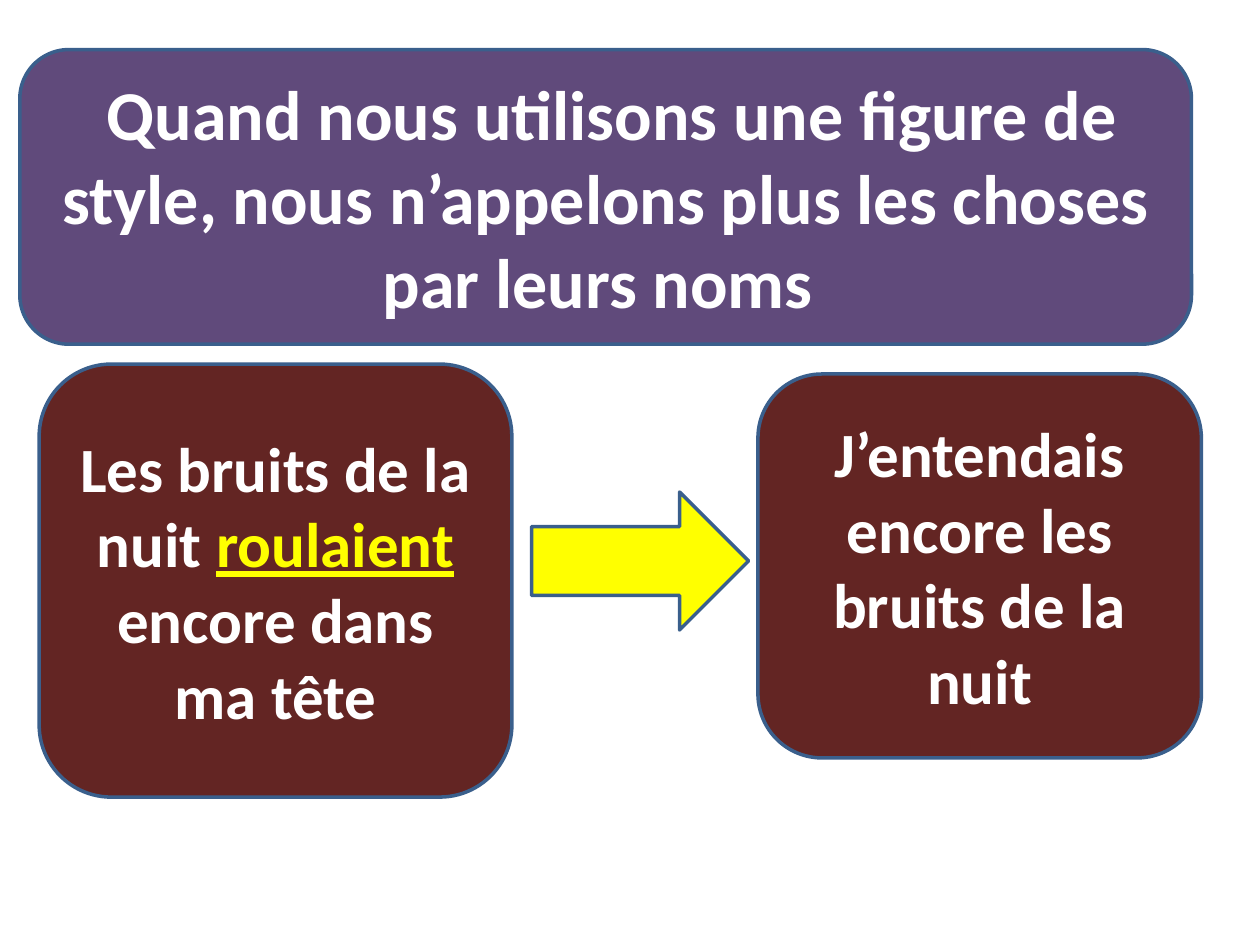
"""Build a slide contrasting a figure of speech with its plain wording."""
from dataclasses import dataclass

from pptx import Presentation
from pptx import util as u
from pptx.dml.color import RGBColor
from pptx.enum import shapes, text


@dataclass(frozen=True)
class Theme:
    font: str = "Calibri"
    purple: str = "604A7B"
    maroon: str = "632523"
    yellow: str = "FFFF00"
    white: str = "FFFFFF"
    outline: str = "3A5F8C"
    outline_width: int = 2
    lead_size: int = 32
    banner_size: int = 40
    example_size: int = 36


THEME = Theme()
ROUNDED = shapes.MSO_SHAPE.ROUNDED_RECTANGLE
ARROW = shapes.MSO_SHAPE.RIGHT_ARROW


def styled(wording, size=THEME.example_size, color=THEME.white, bold=True, underline=False):
    return dict(wording=wording, size=size, color=color, bold=bold, underline=underline)


BLOCKS = [
    dict(kind=ROUNDED, box=(0.4, 1, 23.62, 5.94), fill=THEME.purple, runs=[
        styled(" ", THEME.lead_size, bold=False),
        styled("Quand nous utilisons une figure de style, nous n’appelons plus "
               "les choses par leurs noms ", THEME.banner_size),
    ]),
    dict(kind=ROUNDED, box=(0.79, 7.34, 9.53, 8.73), fill=THEME.maroon, runs=[
        styled("Les bruits de la nuit "),
        styled("roulaient ", color=THEME.yellow, underline=True),
        styled("encore dans ma tête"),
    ]),
    dict(kind=ROUNDED, box=(15.28, 7.54, 8.94, 7.74), fill=THEME.maroon, runs=[
        styled("J’entendais encore les bruits de la nuit"),
    ]),
    dict(kind=ARROW, box=(10.72, 9.92, 4.37, 2.78), fill=THEME.yellow, runs=[]),
]


def add_run(paragraph, style):
    run = paragraph.add_run()
    run.text = style["wording"]
    font = run.font
    font.name = THEME.font
    font.size = u.Pt(style["size"])
    font.bold = style["bold"]
    font.underline = style["underline"]
    font.color.rgb = RGBColor.from_string(style["color"])


def add_block(slide, block):
    shape = slide.shapes.add_shape(block["kind"], *map(u.Cm, block["box"]))
    shape.shadow.inherit = False
    shape.fill.solid()
    shape.fill.fore_color.rgb = RGBColor.from_string(block["fill"])
    shape.line.color.rgb = RGBColor.from_string(THEME.outline)
    shape.line.width = u.Pt(THEME.outline_width)
    frame = shape.text_frame
    frame.word_wrap = True
    frame.vertical_anchor = text.MSO_ANCHOR.MIDDLE
    paragraph = frame.paragraphs[0]
    paragraph.alignment = text.PP_ALIGN.CENTER
    for style in block["runs"]:
        add_run(paragraph, style)


def main():
    presentation = Presentation()
    presentation.slide_width, presentation.slide_height = u.Cm(25.4), u.Cm(19.05)
    slide = presentation.slides.add_slide(presentation.slide_layouts.get_by_name("Blank"))
    for block in BLOCKS:
        add_block(slide, block)
    presentation.save("out.pptx")


if __name__ == "__main__":
    main()
